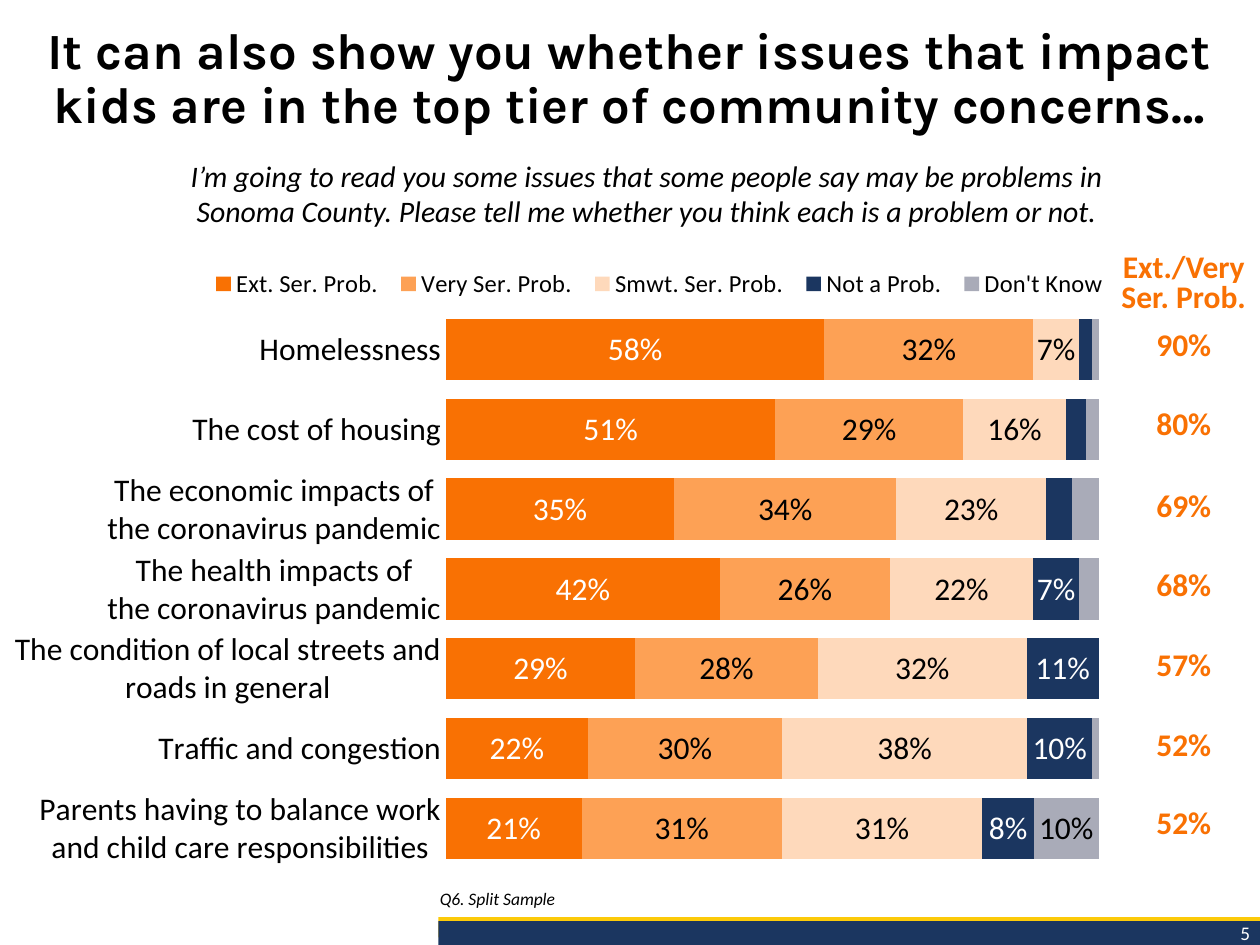
from dataclasses import dataclass

from lxml import etree
from pptx import Presentation
from pptx.chart.data import CategoryChartData
from pptx.dml.color import RGBColor
from pptx.enum.chart import XL_CHART_TYPE, XL_LEGEND_POSITION, XL_TICK_MARK
from pptx.enum.shapes import MSO_SHAPE
from pptx.enum.text import MSO_ANCHOR, PP_ALIGN
from pptx.oxml import parse_xml
from pptx.oxml.ns import nsdecls, qn
from pptx.util import Inches, Pt

LEFT, CENTER, RIGHT = PP_ALIGN.LEFT, PP_ALIGN.CENTER, PP_ALIGN.RIGHT
TOP, BOTTOM = MSO_ANCHOR.TOP, MSO_ANCHOR.BOTTOM
PLAIN_TABLE = "{2D5ABB26-0587-4C30-8999-92F81FD0307C}"


@dataclass(frozen=True)
class Theme:
    black: RGBColor = RGBColor.from_string("000000")
    white: RGBColor = RGBColor.from_string("FFFFFF")
    orange: RGBColor = RGBColor.from_string("F97103")
    mid_orange: RGBColor = RGBColor.from_string("FDA155")
    pale_orange: RGBColor = RGBColor.from_string("FED9BB")
    navy: RGBColor = RGBColor.from_string("1B3660")
    gray: RGBColor = RGBColor.from_string("A9ABB8")
    gold: RGBColor = RGBColor.from_string("FCCA09")
    heading: str = "Karla"
    text: str = "Calibri"
    title_size: int = 29
    question_size: int = 17
    label_size: int = 18
    legend_size: int = 14
    note_size: int = 10
    number_size: int = 11


theme = Theme()


def style_font(font, size, color, name=theme.text, bold=False, italic=False):
    font.name, font.size, font.color.rgb = name, Pt(size), color
    font.bold, font.italic = bold, italic


def write(frame, text, align, anchor, size, color, spacing=None, **style):
    """Put one styled run in the first paragraph of a text frame."""
    frame.word_wrap = True
    frame.vertical_anchor = anchor
    para = frame.paragraphs[0]
    para.alignment = align
    para.space_before = Pt(0)
    if spacing:
        para.line_spacing = spacing
    span = para.add_run()
    span.text = text
    style_font(span.font, size, color, **style)


deck = Presentation()
deck.slide_width, deck.slide_height = Inches(10), Inches(7.5)
page = deck.slides.add_slide(deck.slide_layouts[1])
shapes = page.shapes

# Footer bars and page number
for top, height, color in [(7.28, 0.16, theme.gold), (7.31, 0.19, theme.navy)]:
    bar = shapes.add_shape(MSO_SHAPE.RECTANGLE, Inches(3.48), Inches(top),
                           Inches(6.52), Inches(height))
    bar.shadow.inherit = False
    bar.fill.solid()
    bar.fill.fore_color.rgb = color
    bar.line.fill.background()

number_box = shapes.add_textbox(Inches(8.54), Inches(7.26), Inches(1.48), Inches(0.29))
write(number_box.text_frame, "5", RIGHT, TOP, theme.number_size, theme.white)

# Title, question and note
title = shapes.title
title.left, title.top, title.width, title.height = (
    Inches(0), Inches(0.15), Inches(10), Inches(1.31))
write(title.text_frame,
      "It can also show you whether issues that impact kids are in the top tier "
      "of community concerns…",
      CENTER, TOP, theme.title_size, theme.black, 0.9, name=theme.heading, bold=True)

question_box = shapes.add_textbox(Inches(1.04), Inches(1.2), Inches(8.19), Inches(0.67))
write(question_box.text_frame,
      "I’m going to read you some issues that some people say may be problems in "
      "Sonoma County. Please tell me whether you think each is a problem or not.",
      CENTER, TOP, theme.question_size, theme.black, italic=True)

note = page.placeholders[1]
note.left, note.top, note.width, note.height = (
    Inches(3.39), Inches(6.73), Inches(6.59), Inches(0.54))
note_props = note.text_frame.paragraphs[0]._p.get_or_add_pPr()
note_props.set("marL", "0")
note_props.set("indent", "0")
etree.SubElement(note_props, qn("a:buNone"))
write(note.text_frame, "Q6. Split Sample", LEFT, BOTTOM, theme.note_size, theme.black,
      0.9, italic=True)

# Stacked bar chart
issues = [
    "Homelessness",
    "The cost of housing",
    "The economic impacts of\nthe coronavirus pandemic",
    "The health impacts of\nthe coronavirus pandemic",
    "The condition of local streets and roads in general",
    "Traffic and congestion",
    "Parents having to balance work and child care responsibilities",
]
answers = [
    ("Ext. Ser. Prob.", [0.58, 0.51, 0.35, 0.42, 0.29, 0.22, 0.21], theme.orange, theme.white),
    ("Very Ser. Prob.", [0.32, 0.29, 0.34, 0.26, 0.28, 0.3, 0.31], theme.mid_orange, theme.black),
    ("Smwt. Ser. Prob.", [0.07, 0.16, 0.23, 0.22, 0.32, 0.38, 0.31], theme.pale_orange, theme.black),
    ("Not a Prob.", [0.02, 0.03, 0.04, 0.07, 0.11, 0.1, 0.08], theme.navy, theme.white),
    ("Don't Know", [0.01, 0.02, 0.04, 0.03, 0, 0.01, 0.1], theme.gray, theme.black),
]
smallest_label = 0.05

chart_data = CategoryChartData(number_format="0%")
chart_data.categories = issues
for name, values, _, _ in answers:
    chart_data.add_series(name, values)
chart = shapes.add_chart(XL_CHART_TYPE.BAR_STACKED_100, Inches(0), Inches(1.92),
                         Inches(8.87), Inches(5.13), chart_data).chart
style_font(chart.font, theme.note_size, theme.black)
chart.has_title = False

chart.has_legend = True
legend = chart.legend
legend.position = XL_LEGEND_POSITION.TOP
legend.include_in_layout = False
style_font(legend.font, theme.legend_size, theme.black)

issue_axis = chart.category_axis
issue_axis.reverse_order = True
issue_axis.major_tick_mark = XL_TICK_MARK.NONE
issue_axis.format.line.fill.background()
style_font(issue_axis.tick_labels.font, theme.label_size, theme.black)
chart.value_axis.visible = False
chart.value_axis.has_major_gridlines = False

bars = chart.plots[0]
bars.gap_width, bars.overlap = 30, 100
bars.vary_by_categories = False
for series, (_, values, color, label_color) in zip(bars.series, answers):
    series.format.fill.solid()
    series.format.fill.fore_color.rgb = color
    labels = series.data_labels
    labels.show_value = True
    labels.number_format, labels.number_format_is_linked = "0%", False
    style_font(labels.font, theme.label_size, label_color)
    hidden = [index for index, value in enumerate(values) if value < smallest_label]
    for place, index in enumerate(hidden):
        labels._element.insert(place, parse_xml(
            f'<c:dLbl {nsdecls("c")}><c:idx val="{index}"/><c:delete val="1"/></c:dLbl>'))

# Fixed places for the plot area and the legend, as shares of the chart
plot_area = chart._chartSpace.chart.plotArea
for old in plot_area.findall(qn("c:layout")):
    plot_area.remove(old)
for parent, place, target, (x, y, w, h) in [
    (plot_area, 0, '<c:layoutTarget val="inner"/>', (0.4, 0.1, 0.58, 0.87)),
    (legend._element, 1, "", (0.18, 0.03, 0.82, 0.07)),
]:
    if target:
        x, y, w, h = 0.399, 0.105, 0.584, 0.864
    parent.insert(place, parse_xml(
        f'<c:layout {nsdecls("c")}><c:manualLayout>{target}'
        '<c:xMode val="edge"/><c:yMode val="edge"/>'
        f'<c:x val="{x}"/><c:y val="{y}"/><c:w val="{w}"/><c:h val="{h}"/>'
        '</c:manualLayout></c:layout>'))

# Totals beside the bars
totals = ["Ext./Very Ser. Prob.", "90%", "80%", "69%", "68%", "57%", "52%", "52%"]
heights = [0.48, 0.38, 0.63, 0.65, 0.63, 0.63, 0.64, 0.62]
table = shapes.add_table(len(totals), 1, Inches(8.82), Inches(2.03),
                         Inches(1.15), Inches(sum(heights))).table
table.first_row = table.horz_banding = False
table._tbl.tblPr.find(qn("a:tableStyleId")).text = PLAIN_TABLE
for index, (total, height) in enumerate(zip(totals, heights)):
    table.rows[index].height = Inches(height)
    cell = table.cell(index, 0)
    cell.fill.background()
    cell.margin_left = cell.margin_right = cell.margin_top = Inches(0.01)
    cell.margin_bottom = Inches(0)
    write(cell.text_frame, total, CENTER, BOTTOM, theme.label_size, theme.orange,
          Pt(17) if index == 0 else None, bold=True)
    cell.vertical_anchor = BOTTOM

deck.save("out.pptx")
